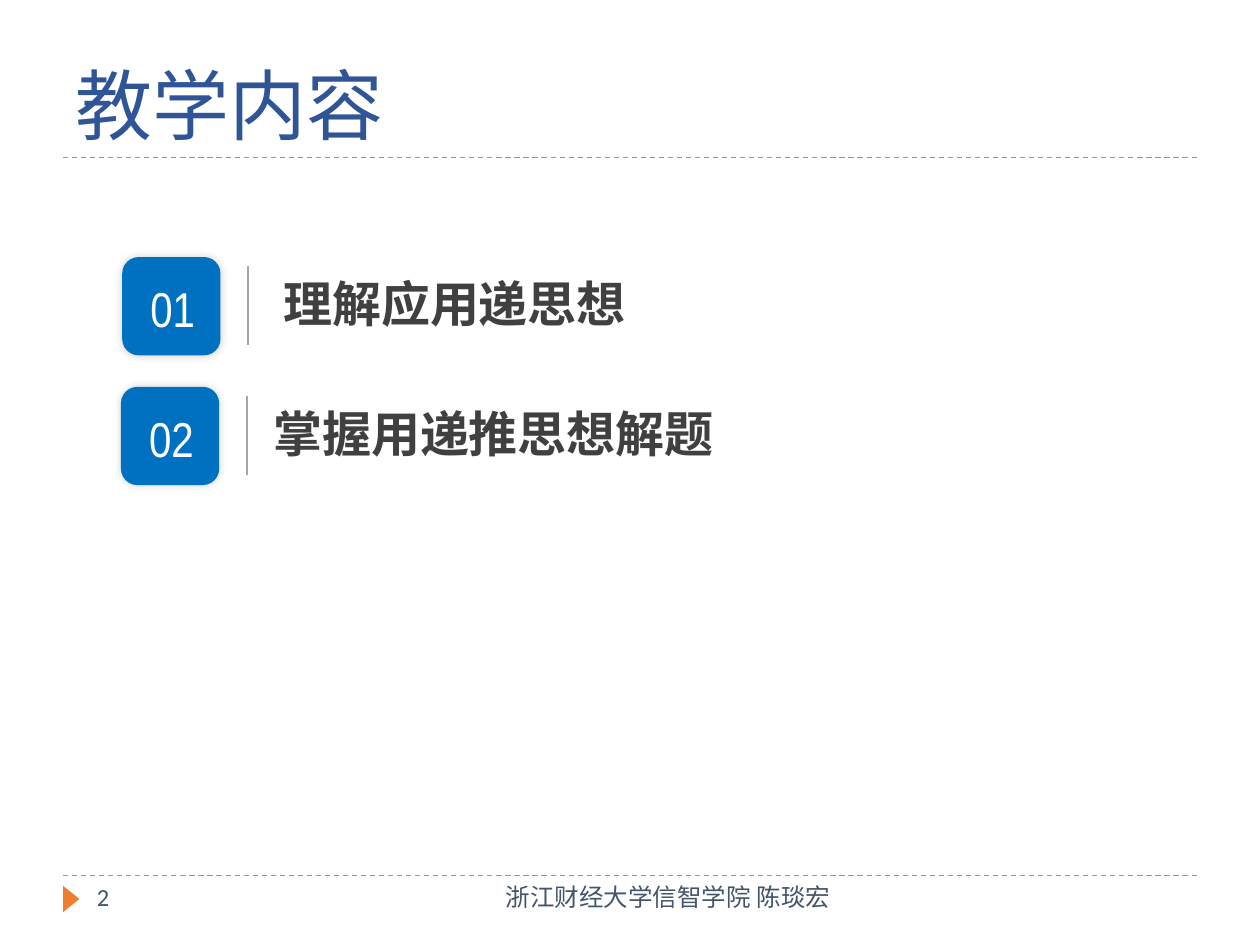
from lxml.etree import SubElement
from pptx import Presentation
from pptx.dml.color import RGBColor
from pptx.enum.dml import MSO_LINE_DASH_STYLE as Dash
from pptx.enum.shapes import MSO_CONNECTOR as Connector, MSO_SHAPE as Shape
from pptx.enum.text import MSO_ANCHOR as Anchor, PP_ALIGN as Align
from pptx.oxml.ns import qn
from pptx.util import Inches, Pt

ORANGE, SLATE, GRAY = "ED7D31", "44546A", "A6A6A6"
CJK_FONT = "Noto Sans CJK SC"


def color(hex_string):
    return RGBColor.from_string(hex_string)


def write(frame, text, size=14, font="Calibri", fill=SLATE, bold=False,
          align=Align.LEFT, anchor=Anchor.TOP, spacing=None):
    frame.word_wrap = True
    frame.vertical_anchor = anchor
    para = frame.paragraphs[0]
    para.alignment = align
    para.line_spacing = spacing
    span = para.add_run()
    span.text = text
    span.font.size = Pt(size)
    span.font.bold = bold
    span.font.color.rgb = color(fill)
    span.font.name = font
    SubElement(span.font._element, qn("a:ea"), typeface=CJK_FONT)


def add_text(page, left, top, width, height, text, **format):
    box = page.shapes.add_textbox(Inches(left), Inches(top), Inches(width), Inches(height))
    write(box.text_frame, text, **format)


def add_line(page, start, end, stroke, width, dash=None):
    line = page.shapes.add_connector(
        Connector.STRAIGHT, *(Inches(value) for value in start + end))
    line.line.color.rgb = color(stroke)
    line.line.width = Pt(width)
    line.line.dash_style = dash
    SubElement(line._element.spPr, qn("a:effectLst"))


def add_solid(page, kind, left, top, width, height, fill):
    shape = page.shapes.add_shape(
        kind, Inches(left), Inches(top), Inches(width), Inches(height))
    shape.fill.solid()
    shape.fill.fore_color.rgb = color(fill)
    shape.line.fill.background()
    shape.shadow.inherit = False
    return shape


def add_soft_shadow(shape):
    effects = shape._element.spPr.find(qn("a:effectLst"))
    shadow = SubElement(effects, qn("a:outerShdw"), blurRad=str(Pt(5)), dist="0",
                        dir="0", algn="ctr", rotWithShape="0")
    shade = SubElement(shadow, qn("a:srgbClr"), val="000000")
    SubElement(shade, qn("a:alpha"), val="19000")


def add_item(page, left, top, number, text, text_left, text_width):
    """Numbered tile, thin divider and the topic beside it."""
    tile = add_solid(page, Shape.ROUNDED_RECTANGLE, left, top, 0.78, 0.78, "0070C0")
    add_soft_shadow(tile)
    add_text(page, left + 0.01, top + 0.12, 0.78, 0.57, number, size=28,
             font="Arial Narrow", fill="FFFFFF", align=Align.CENTER)
    divider = left + 1
    add_line(page, (divider, top + 0.07), (divider, top + 0.7), GRAY, 1)
    add_text(page, text_left, top + 0.08, text_width, 0.57, text, size=28,
             font=CJK_FONT, fill="404040", bold=True)


def add_title(page, text):
    title = page.shapes.title
    title.left, title.top = Inches(0.5), Inches(0.17)
    title.width, title.height = Inches(9), Inches(1.08)
    write(title.text_frame, text, size=44, fill="2F5597",
          anchor=Anchor.BOTTOM, spacing=0.9)


def main():
    deck = Presentation()
    deck.slide_width, deck.slide_height = Inches(10), Inches(7.5)
    page = deck.slides.add_slide(deck.slide_layouts[5])

    # Rules and title
    for y in (6.95, 1.25):
        add_line(page, (0.5, y), (9.5, y), ORANGE, 0.75, Dash.DASH)
    add_title(page, "教学内容")

    # Topics
    add_item(page, 0.97, 2.04, "01", "理解应用递思想", 2.15, 7.2)
    add_item(page, 0.96, 3.07, "02", "掌握用递推思想解题", 2.07, 6.61)

    # Footer
    marker = add_solid(page, Shape.ISOSCELES_TRIANGLE, 0.46, 7.07, 0.21, 0.13, ORANGE)
    marker.rotation = 90
    add_text(page, 0.67, 6.95, 2.17, 0.4, "2")
    add_text(page, 3.31, 6.95, 3.38, 0.4, "浙江财经大学信智学院 陈琰宏", align=Align.RIGHT)

    deck.save("out.pptx")


if __name__ == "__main__":
    main()
